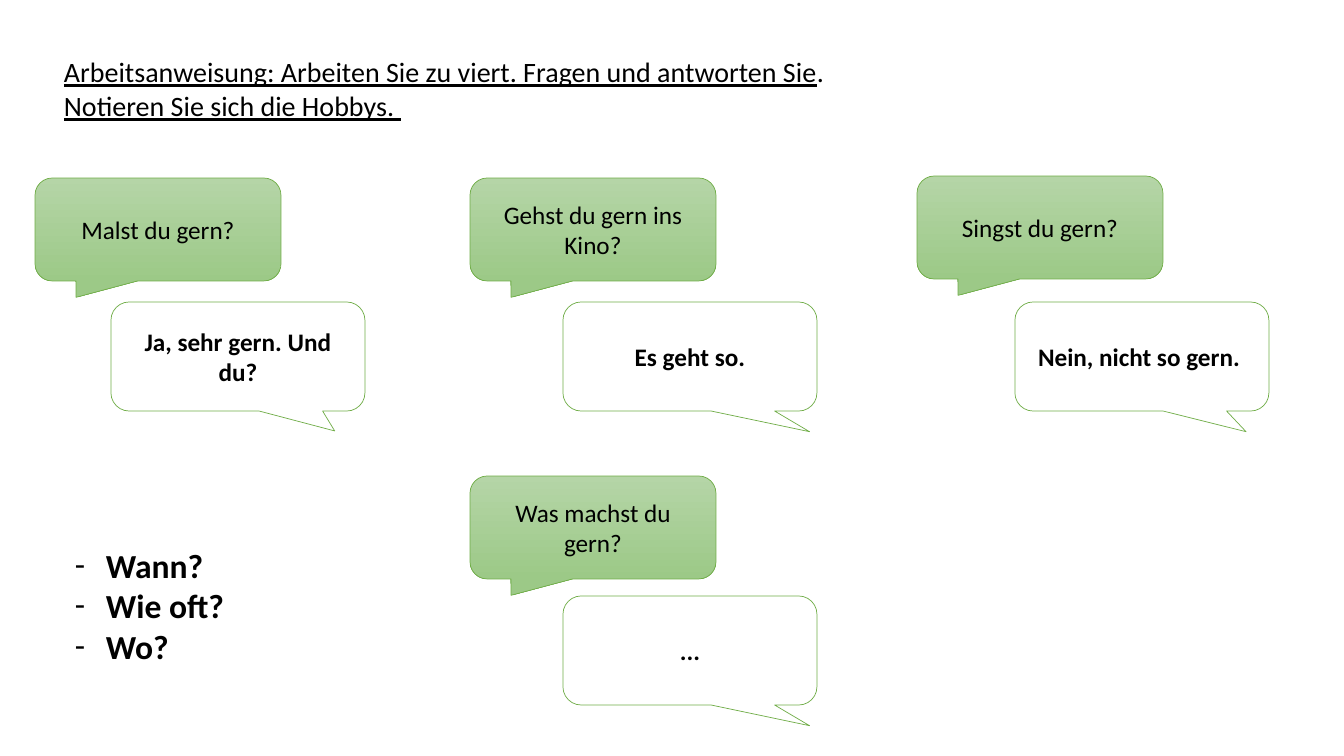
"""Build a German conversation exercise slide about hobbies."""
import pptx
import pptx.dml.color
import pptx.enum.shapes
import pptx.enum.text
import pptx.oxml.ns
import pptx.util
from lxml import etree

EMU_PER_PX = 914400 / 100.8


def px(*lengths):
    return [pptx.util.Emu(round(length * EMU_PER_PX)) for length in lengths]


def add_run(paragraph, text, size, bold=False, underline=False):
    run = paragraph.add_run()
    run.text = text
    run.font.name = "Calibri"
    run.font.size = pptx.util.Pt(size)
    run.font.bold = bold
    run.font.underline = underline
    run.font.color.rgb = color("000000")


color = pptx.dml.color.RGBColor.from_string
presentation = pptx.Presentation()
presentation.slide_width, presentation.slide_height = px(1344, 756)
slide = presentation.slides.add_slide(presentation.slide_layouts[6])

QUESTION_SIZE = (246, 103)
QUESTION_TAIL = (-0.333, 0.659)
ANSWER_SIZE = (254, 109)
questions = [
    ("Malst du gern?", 35, 178),
    ("Gehst du gern ins Kino?", 470, 178),
    ("Singst du gern?", 917, 176),
    ("Was machst du gern?", 470, 476),
]
answers = [
    ("Ja, sehr gern. Und du?", 111, 302, (0.381, 0.683)),
    ("Es geht so.", 563, 302, (0.471, 0.69)),
    ("Nein, nicht so gern. ", 1015, 302, (0.41, 0.69)),
    ("...", 563, 596, (0.471, 0.69)),
]
bubbles = [(*question, QUESTION_TAIL, QUESTION_SIZE, False) for question in questions]
bubbles += [(*answer, ANSWER_SIZE, True) for answer in answers]

for text, left, top, tail, size, is_answer in bubbles:
    shape = slide.shapes.add_shape(
        pptx.enum.shapes.MSO_SHAPE.ROUNDED_RECTANGULAR_CALLOUT, *px(left, top, *size)
    )
    shape.shadow.inherit = False
    for index, value in enumerate((*tail, 0.167)):
        shape.adjustments[index] = value
    if is_answer:
        shape.fill.solid()
        shape.fill.fore_color.rgb = color("FFFFFF")
    else:
        shape.fill.gradient()
        shape.fill.gradient_angle = 270
        for stop, shade in zip(shape.fill.gradient_stops, ("B5D5A7", "9CC987")):
            stop.color.rgb = color(shade)
    shape.line.color.rgb = color("70AD47")
    shape.line.width = pptx.util.Pt(0.5)
    shape.text_frame.word_wrap = True
    shape.text_frame.vertical_anchor = pptx.enum.text.MSO_ANCHOR.MIDDLE
    paragraph = shape.text_frame.paragraphs[0]
    paragraph.alignment = pptx.enum.text.PP_ALIGN.CENTER
    add_run(paragraph, text, 18, bold=is_answer)

instruction = slide.shapes.add_textbox(*px(54, 50, 788, 78)).text_frame
instruction.word_wrap = True
for text, underline in (
    ("Arbeitsanweisung: Arbeiten Sie zu viert. Fragen und antworten Sie", True),
    (". ", False),
    ("Notieren Sie sich die Hobbys. ", True),
):
    add_run(instruction.paragraphs[0], text, 20, underline=underline)

prompts = slide.shapes.add_textbox(*px(65, 540, 300, 132)).text_frame
prompts.word_wrap = True
for index, text in enumerate(("Wann?", "Wie oft?", "Wo?")):
    paragraph = prompts.add_paragraph() if index else prompts.paragraphs[0]
    properties = paragraph._p.get_or_add_pPr()
    indent = px(31)[0]
    properties.set("marL", str(indent))
    properties.set("indent", str(-indent))
    etree.SubElement(properties, pptx.oxml.ns.qn("a:buFont"), typeface="Calibri")
    etree.SubElement(properties, pptx.oxml.ns.qn("a:buChar"), char="-")
    add_run(paragraph, text, 24, bold=True)

presentation.save("out.pptx")
